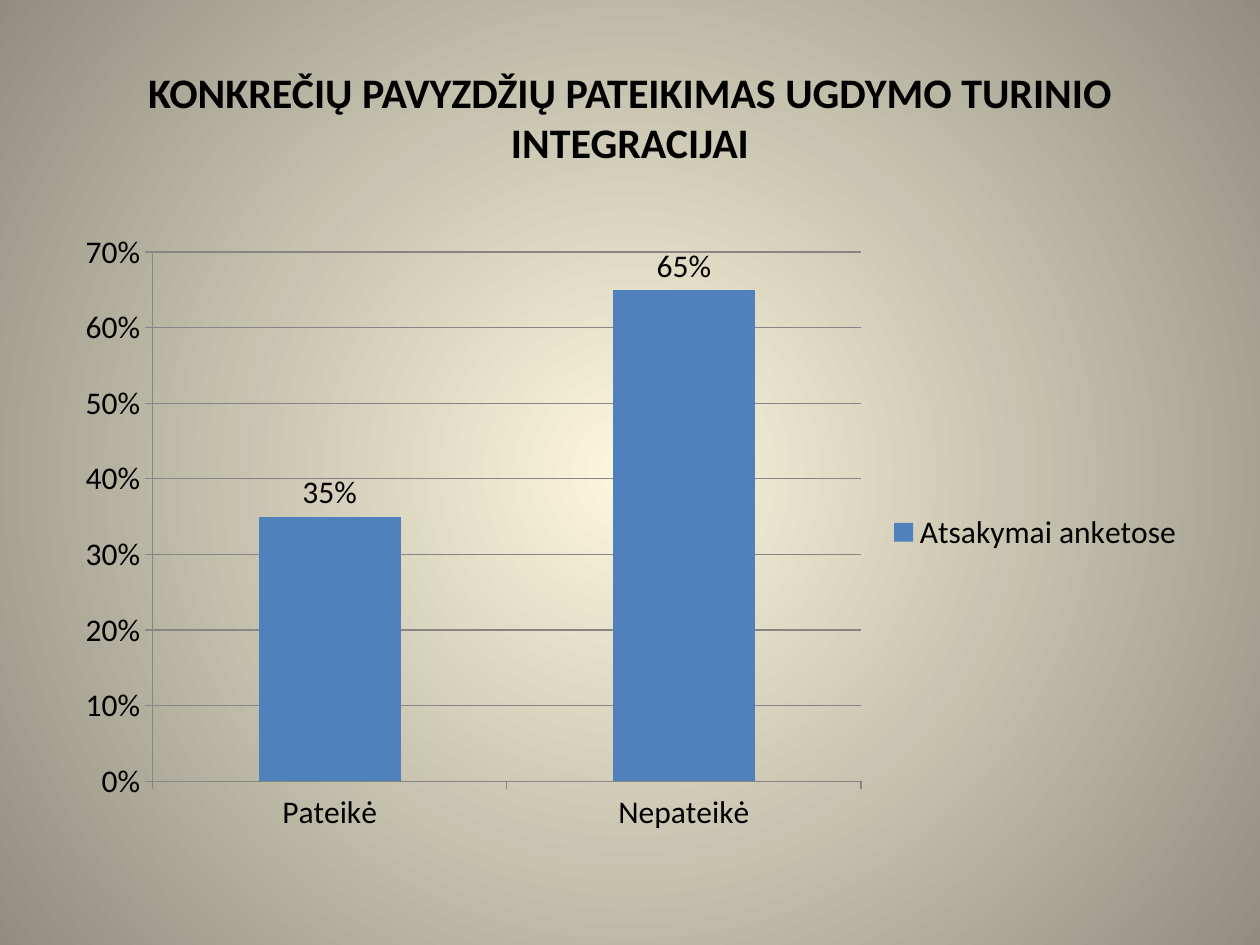
from dataclasses import dataclass

import pptx
import pptx.chart.data
import pptx.dml.color
import pptx.enum.chart
import pptx.enum.text
import pptx.oxml
import pptx.oxml.ns
import pptx.util
from pptx.util import Inches

FONT = "Calibri"
COLORS = {
    "text": "000000",
    "bar": "4F81BD",
    "line": "868686",
    "center": "FCF7DD",
    "edge": "918E81",
}


@dataclass
class Box:
    left: float
    top: float
    width: float
    height: float

    def lengths(self) -> tuple:
        return tuple(Inches(v) for v in (self.left, self.top, self.width, self.height))


def color(name: str) -> pptx.dml.color.RGBColor:
    return pptx.dml.color.RGBColor.from_string(COLORS[name])


def style_font(font, size: float, bold: bool = False) -> None:
    font.name = FONT
    font.size = pptx.util.Pt(size)
    font.bold = bold
    font.color.rgb = color("text")


def paint_background(slide) -> None:
    """Fill the background with a circular gradient from the center."""
    fill = slide.background.fill
    fill.gradient()
    for stop, name, position in zip(fill.gradient_stops, ("center", "edge"), (0, 1)):
        stop.color.rgb = color(name)
        stop.position = position
    gradient = slide.element.find(".//" + pptx.oxml.ns.qn("a:gradFill"))
    linear = gradient.find(pptx.oxml.ns.qn("a:lin"))
    circle = pptx.oxml.parse_xml(
        f'<a:path {pptx.oxml.ns.nsdecls("a")} path="circle">'
        '<a:fillToRect l="50000" t="50000" r="50000" b="50000"/></a:path>'
    )
    gradient.replace(linear, circle)


def add_title(slide, box: Box, text: str) -> None:
    frame = slide.shapes.add_textbox(*box.lengths()).text_frame
    frame.word_wrap = True
    frame.vertical_anchor = pptx.enum.text.MSO_ANCHOR.MIDDLE
    paragraph = frame.paragraphs[0]
    paragraph.text = text
    paragraph.alignment = pptx.enum.text.PP_ALIGN.CENTER
    style_font(paragraph.font, 24, bold=True)


def style_line(line) -> None:
    line.color.rgb = color("line")
    line.width = pptx.util.Pt(0.75)


def add_answer_chart(slide, box: Box, series_name: str, answers: dict) -> None:
    data = pptx.chart.data.CategoryChartData(number_format="0%")
    data.categories = list(answers)
    data.add_series(series_name, list(answers.values()))
    chart = slide.shapes.add_chart(
        pptx.enum.chart.XL_CHART_TYPE.COLUMN_CLUSTERED, *box.lengths(), data
    ).chart
    style_font(chart.font, 18)
    chart.has_title = False

    # Legend
    chart.has_legend = True
    chart.legend.position = pptx.enum.chart.XL_LEGEND_POSITION.RIGHT
    chart.legend.include_in_layout = False

    # Axes
    for axis in (chart.category_axis, chart.value_axis):
        axis.major_tick_mark = pptx.enum.chart.XL_TICK_MARK.OUTSIDE
        style_line(axis.format.line)
    value_axis = chart.value_axis
    value_axis.minimum_scale, value_axis.maximum_scale = 0, 0.7
    value_axis.major_unit = 0.1
    value_axis.has_major_gridlines = True
    style_line(value_axis.major_gridlines.format.line)
    value_axis.tick_labels.number_format = "0%"
    value_axis.tick_labels.number_format_is_linked = False

    # Columns and their labels
    plot = chart.plots[0]
    plot.gap_width = 150
    plot.vary_by_categories = False
    series = plot.series[0]
    series.format.fill.solid()
    series.format.fill.fore_color.rgb = color("bar")
    labels = series.data_labels
    labels.show_value = True
    labels.number_format = "0%"
    labels.number_format_is_linked = False
    labels.position = pptx.enum.chart.XL_LABEL_POSITION.OUTSIDE_END


def main() -> None:
    presentation = pptx.Presentation()
    presentation.slide_width = Inches(10)
    presentation.slide_height = Inches(7.5)
    slide = presentation.slides.add_slide(presentation.slide_layouts[6])

    paint_background(slide)
    add_title(
        slide,
        Box(0.5, 0.3, 9, 1.25),
        "KONKREČIŲ PAVYZDŽIŲ PATEIKIMAS UGDYMO TURINIO INTEGRACIJAI",
    )
    add_answer_chart(
        slide,
        Box(0.5, 1.75, 9, 4.95),
        "Atsakymai anketose",
        {"Pateikė": 0.35, "Nepateikė": 0.65},
    )
    presentation.save("out.pptx")


if __name__ == "__main__":
    main()
